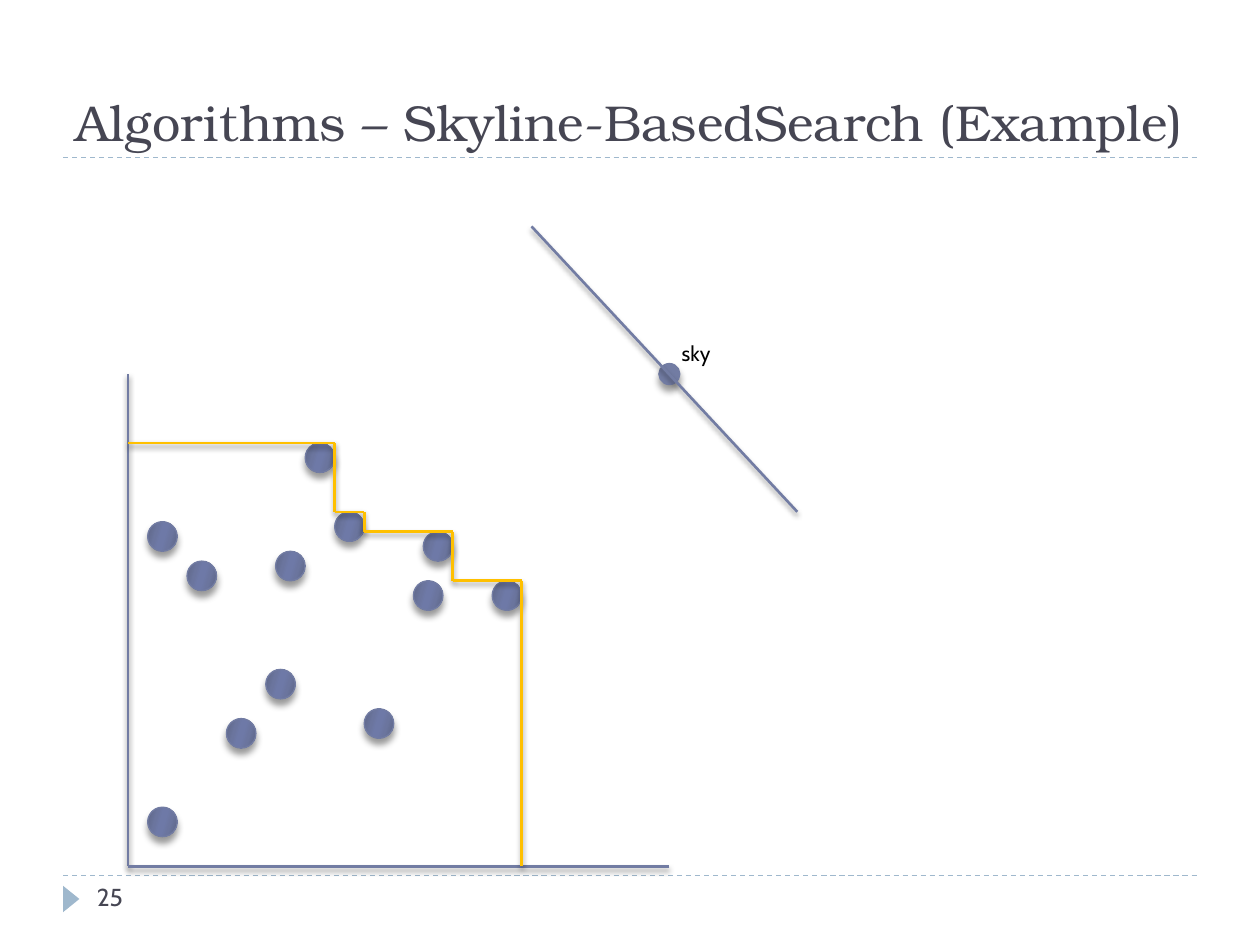
from itertools import pairwise

from lxml import etree
from pptx import Presentation
from pptx.dml.color import RGBColor
from pptx.enum import dml, shapes, text
from pptx.oxml import ns
from pptx.util import Pt

GRID = 45 / 8
BLUE, GOLD, PALE, DARK = "727CA3", "FFC000", "9FB8CD", "464653"
DOT_STOPS = [(0, "5D6585"), (30, "6B759E"), (45, "6E79A7"),
             (55, "6E79A7"), (73, "6B759E"), (100, "5D6585")]
DOTS = [(15, 82), (15, 53), (19, 57), (23, 73), (27, 68), (28, 56),
        (34, 52), (31, 45), (43, 54), (42, 59), (50, 59), (37, 72)]
SKYLINE = [(13, 45), (34, 45), (34, 52), (37, 52), (37, 54),
           (46, 54), (46, 59), (53, 59), (53, 88)]


def colour(value):
    """Return the colour for a hex string."""
    return RGBColor.from_string(value)


def on_grid(*cells):
    """Turn grid counts into points."""
    return [cell * GRID for cell in cells]


def add_child(parent, tag, **attributes):
    """Append a drawing element with the given attributes."""
    child = etree.SubElement(parent, ns.qn(tag))
    for name, value in attributes.items():
        child.set(name, str(value))
    return child


def set_shadow(shape, blur=0, distance=0):
    """Give a shape a soft shadow below it, or none at all."""
    effects = add_child(shape._element.spPr, "a:effectLst")
    if blur:
        shadow = add_child(effects, "a:outerShdw", blurRad=Pt(blur), dist=Pt(distance),
                           dir=90 * 60000, algn="ctr", rotWithShape=0)
        black = add_child(shadow, "a:srgbClr", val="000000")
        add_child(black, "a:alpha", val=40000)


def add_line(page, start, end, line_colour, width=1.5, dashed=False):
    """Draw a straight line between two places in points."""
    ends = [Pt(value) for value in (*start, *end)]
    line = page.shapes.add_connector(shapes.MSO_CONNECTOR.STRAIGHT, *ends)
    line.line.color.rgb = colour(line_colour)
    line.line.width = Pt(width)
    if dashed:
        line.line.dash_style = dml.MSO_LINE.DASH
        set_shadow(line)
    else:
        set_shadow(line, 3, 2)


def add_circle(page, left, top, size, width, stops=None):
    """Draw a shaded circle, with a gradient when stops are given."""
    frame = [Pt(value) for value in on_grid(left, top, size, size)]
    circle = page.shapes.add_shape(shapes.MSO_SHAPE.OVAL, *frame)
    if stops:
        circle.fill.gradient()
        circle.fill.gradient_angle = 344
        stop_list = circle._element.spPr.find(".//" + ns.qn("a:gsLst"))
        for old in list(stop_list):
            stop_list.remove(old)
        for position, value in stops:
            stop = add_child(stop_list, "a:gs", pos=position * 1000)
            add_child(stop, "a:srgbClr", val=value)
    else:
        circle.fill.solid()
        circle.fill.fore_color.rgb = colour(BLUE)
    circle.line.color.rgb = colour(BLUE)
    circle.line.width = Pt(width)
    set_shadow(circle, 4, 3.4)


def add_marker(page, left, top, width, height):
    """Draw the triangle that points to the page number."""
    frame = [Pt(value) for value in (left, top, width, height)]
    marker = page.shapes.add_shape(shapes.MSO_SHAPE.ISOSCELES_TRIANGLE, *frame)
    marker.rotation = 90
    marker.fill.solid()
    marker.fill.fore_color.rgb = colour(PALE)
    marker.line.fill.background()
    marker.shadow.inherit = False


def write(box, words, font, size, text_colour, **frame_format):
    """Write one formatted line of text into a box."""
    frame = box.text_frame
    settings = {"word_wrap": True, "auto_size": text.MSO_AUTO_SIZE.NONE} | frame_format
    for name, value in settings.items():
        setattr(frame, name, value)
    para = frame.paragraphs[0]
    para.alignment = text.PP_ALIGN.LEFT
    span = para.add_run()
    span.text = words
    for name, value in {"name": font, "size": Pt(size)}.items():
        setattr(span.font, name, value)
    span.font.color.rgb = colour(text_colour)


def add_title(page, words):
    """Place and format the slide title."""
    title = page.shapes.title
    place = {"left": 36, "top": 12.24, "width": 648, "height": 77.76}
    for name, value in place.items():
        setattr(title, name, Pt(value))
    write(title, words, "TeX Gyre Bonum", 28.8, DARK,
          vertical_anchor=text.MSO_ANCHOR.BOTTOM)


def add_label(page, words, frame, size, text_colour, **frame_format):
    """Add a small text box."""
    box = page.shapes.add_textbox(*[Pt(value) for value in frame])
    write(box, words, "Cabin", size, text_colour, **frame_format)


def main():
    """Build the slide and save it."""
    deck = Presentation()
    deck.slide_width, deck.slide_height = Pt(720), Pt(540)
    page = deck.slides.add_slide(deck.slide_layouts[5])

    for height in (500.4, 90):
        add_line(page, (36, height), (684, height), PALE, 0.75, dashed=True)
    add_marker(page, 33.12, 509.04, 15.12, 9.36)
    add_circle(page, 67, 37, 2, 1.5)
    add_title(page, "Algorithms – Skyline-BasedSearch (Example)")
    add_label(page, "25", (48.24, 500.4, 156.24, 28.8), 14, DARK)

    for start, end in [((13, 38), (13, 88)), ((68, 88), (13, 88))]:
        add_line(page, on_grid(*start), on_grid(*end), BLUE)
    for left, top in DOTS:
        add_circle(page, left, top, 3, 0.75, DOT_STOPS)
    add_line(page, on_grid(54, 23), on_grid(81, 52), BLUE)
    for start, end in pairwise(SKYLINE):
        add_line(page, on_grid(*start), on_grid(*end), GOLD)
    add_label(page, "sky", (382.5, 191.25, 33.84, 21.6), 12, "000000",
              auto_size=text.MSO_AUTO_SIZE.SHAPE_TO_FIT_TEXT)

    deck.save("out.pptx")


if __name__ == "__main__":
    main()
